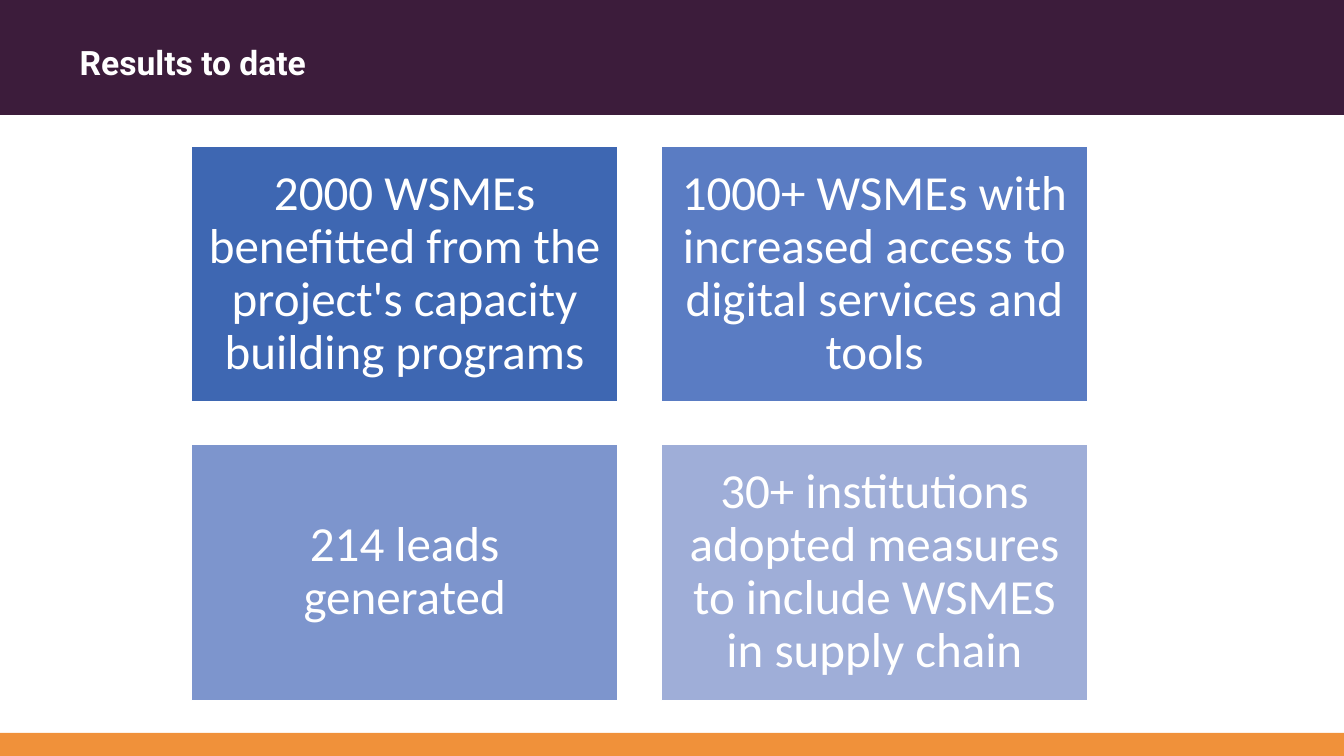
from pptx import Presentation
from pptx.dml.color import RGBColor
from pptx.enum.shapes import MSO_SHAPE
from pptx.enum.text import MSO_ANCHOR, MSO_AUTO_SIZE, PP_ALIGN
from pptx.util import Inches, Pt

RECTANGLE = MSO_SHAPE.RECTANGLE
TOP, MIDDLE = MSO_ANCHOR.TOP, MSO_ANCHOR.MIDDLE
LEFT, CENTER = PP_ALIGN.LEFT, PP_ALIGN.CENTER
NO_AUTOFIT = MSO_AUTO_SIZE.NONE

WHITE = RGBColor(0xFF, 0xFF, 0xFF)
PLUM = RGBColor(0x3C, 0x1C, 0x3B)
ORANGE = RGBColor(0xF0, 0x91, 0x3A)

SLIDE_WIDTH, SLIDE_HEIGHT = 13.33, 7.5
HEADER_HEIGHT, FOOTER_HEIGHT = 1.14, 0.23
GRID_LEFT, GRID_TOP = 1.9, 1.45
CARD_WIDTH, CARD_HEIGHT = 4.23, 2.54
COLUMN_STEP, ROW_STEP = 4.66, 2.96
COLUMNS = 2

RESULTS = [
    ("2000 WSMEs benefitted from the project's capacity building programs",
     RGBColor(0x3E, 0x67, 0xB2)),
    ("1000+ WSMEs with increased access to digital services and tools",
     RGBColor(0x5A, 0x7C, 0xC3)),
    ("214 leads generated", RGBColor(0x7D, 0x95, 0xCD)),
    ("30+ institutions adopted measures to include WSMES in supply chain",
     RGBColor(0x9F, 0xAE, 0xD8)),
]


def write_text(shape, text, *, font, size, bold=False, align=LEFT,
               anchor=TOP, margins=(0.1, 0.05)):
    """Fill a shape with one formatted white paragraph."""
    frame = shape.text_frame
    frame.word_wrap = True
    frame.auto_size = NO_AUTOFIT
    frame.vertical_anchor = anchor
    frame.margin_left = frame.margin_right = Inches(margins[0])
    frame.margin_top = frame.margin_bottom = Inches(margins[1])
    para = frame.paragraphs[0]
    para.alignment = align
    para.line_spacing = 0.9
    para.space_before = Pt(0)
    span = para.add_run()
    span.text = text
    span.font.name = font
    span.font.size = Pt(size)
    span.font.bold = bold
    span.font.color.rgb = WHITE


def add_box(page, left, top, width, height, color):
    """Add a plain filled rectangle without outline or shadow."""
    box = page.shapes.add_shape(RECTANGLE, Inches(left), Inches(top),
                                Inches(width), Inches(height))
    box.shadow.inherit = False
    box.fill.solid()
    box.fill.fore_color.rgb = color
    box.line.fill.background()
    return box


def add_card(page, index, text, color):
    """Add one result card at its place in the grid."""
    row, column = divmod(index, COLUMNS)
    card = add_box(page, GRID_LEFT + column * COLUMN_STEP,
                   GRID_TOP + row * ROW_STEP, CARD_WIDTH, CARD_HEIGHT, color)
    card.line.color.rgb = WHITE
    card.line.width = Pt(1)
    write_text(card, text, font="Calibri", size=35, align=CENTER,
               anchor=MIDDLE, margins=(0.15, 0.15))


def place_title(page, text):
    """Move the title placeholder in front of the header band and fill it."""
    title = page.shapes.title
    title.left, title.top = Inches(0.69), Inches(0.41)
    title.width, title.height = Inches(12.2), Inches(0.72)
    title.element.getparent().append(title.element)
    write_text(title, text, font="Roboto", size=24, bold=True)


def main():
    """Build and save the results slide."""
    deck = Presentation()
    deck.slide_width = Inches(SLIDE_WIDTH)
    deck.slide_height = Inches(SLIDE_HEIGHT)
    page = deck.slides.add_slide(deck.slide_layouts.get_by_name("Title Only"))
    add_box(page, 0, SLIDE_HEIGHT - FOOTER_HEIGHT, SLIDE_WIDTH, FOOTER_HEIGHT, ORANGE)
    add_box(page, 0, 0, SLIDE_WIDTH, HEADER_HEIGHT, PLUM)
    place_title(page, "Results to date")
    for index, (text, color) in enumerate(RESULTS):
        add_card(page, index, text, color)
    deck.save("out.pptx")


if __name__ == "__main__":
    main()
